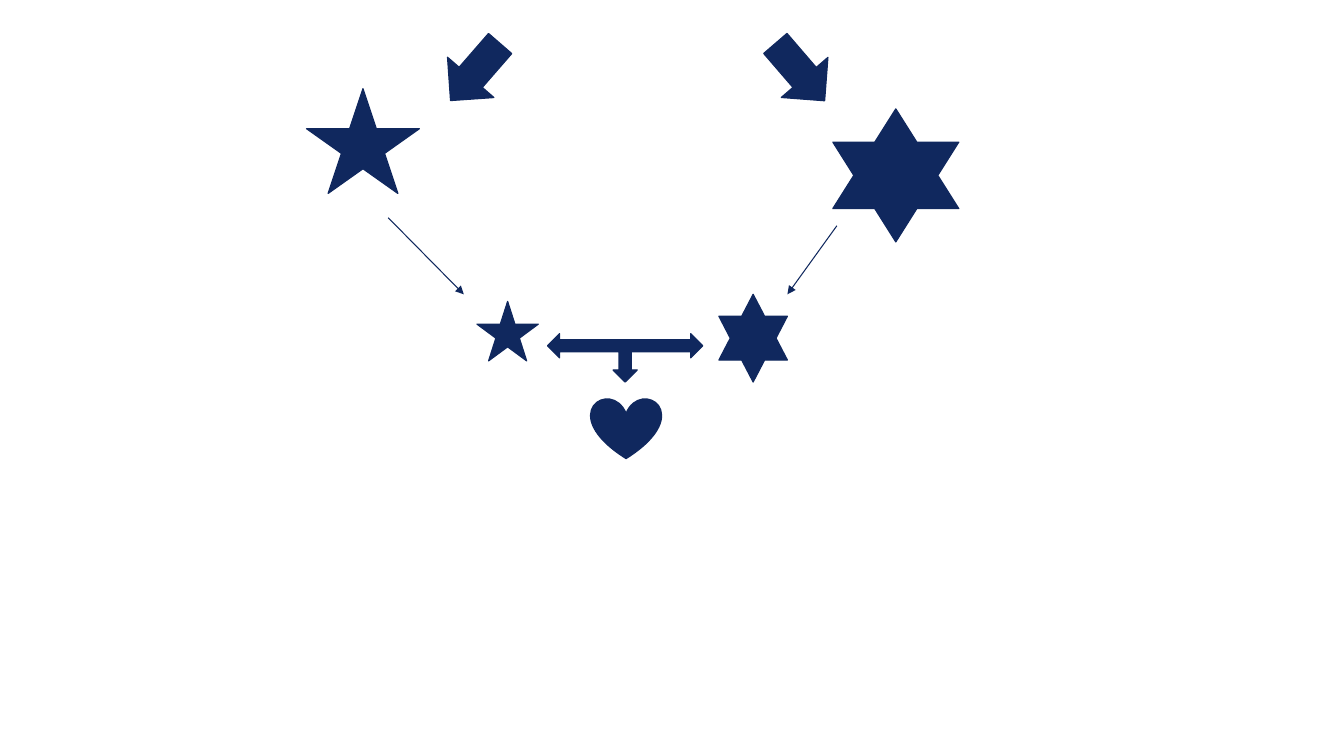
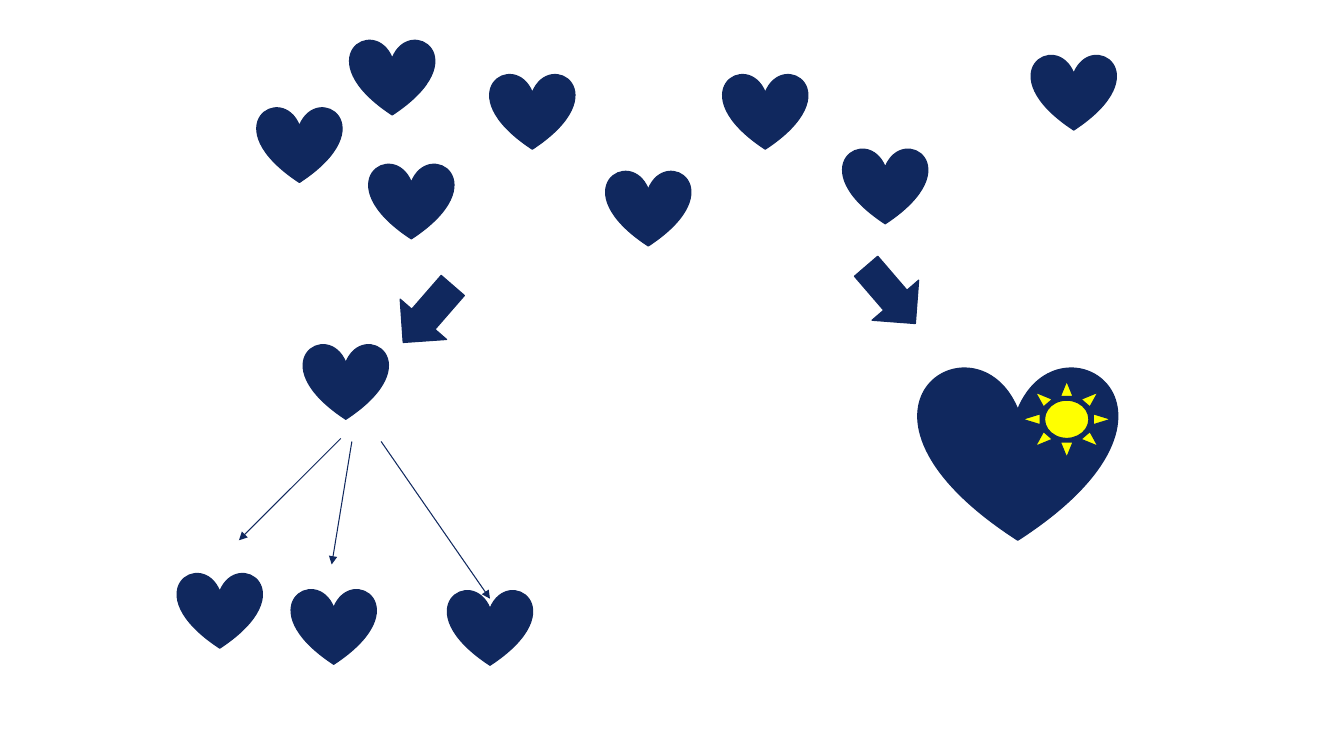
from lxml import etree
from pptx import Presentation
from pptx.dml.color import RGBColor
from pptx.enum.shapes import MSO_CONNECTOR, MSO_SHAPE
from pptx.oxml.ns import qn
from pptx.util import Inches, Pt

STRAIGHT = MSO_CONNECTOR.STRAIGHT
STAR_5 = MSO_SHAPE.STAR_5_POINT
STAR_6 = MSO_SHAPE.STAR_6_POINT
BLOCK_ARROW = MSO_SHAPE.DOWN_ARROW
THREE_WAY_ARROW = MSO_SHAPE.LEFT_RIGHT_UP_ARROW
HEART = MSO_SHAPE.HEART
SUN = MSO_SHAPE.SUN

COLORS = {"navy": "10285E", "yellow": "FFFF00"}
HEART_SIZE = (0.84, 0.75)
BLOCK_ARROW_SIZE = (0.61, 0.75)
TO_LEFT, TO_RIGHT = 41, 319.3


def rgb(name):
    return RGBColor.from_string(COLORS[name])


class Region:
    """A part of a slide whose symbols are placed from its top left corner."""

    def __init__(self, slide, left, top):
        self.shapes = slide.shapes
        self.left, self.top = left, top

    def point(self, x, y):
        return Inches(self.left + x), Inches(self.top + y)

    def symbol(self, kind, position, size, fill="navy", rotation=0):
        width, height = size
        symbol = self.shapes.add_shape(
            kind, *self.point(*position), Inches(width), Inches(height))
        symbol.shadow.inherit = False
        symbol.rotation = rotation
        symbol.fill.solid()
        symbol.fill.fore_color.rgb = rgb(fill)
        symbol.line.color.rgb = rgb("navy")
        symbol.line.width = Pt(0.85)

    def heart(self, position, size=HEART_SIZE):
        self.symbol(HEART, position, size)

    def block_arrow(self, position, rotation):
        self.symbol(BLOCK_ARROW, position, BLOCK_ARROW_SIZE, rotation=rotation)

    def thin_arrow(self, start, end):
        arrow = self.shapes.add_connector(
            STRAIGHT, *self.point(*start), *self.point(*end))
        arrow.line.color.rgb = rgb("navy")
        arrow.line.width = Pt(0.75)
        outline = arrow.line._get_or_add_ln()
        etree.SubElement(outline, qn("a:tailEnd"), type="triangle")
        etree.SubElement(arrow._element.spPr, qn("a:effectLst"))


def draw_star_couple(slide, left, top):
    """Two stars, their smaller offspring, and the heart these lead to."""
    region = Region(slide, left, top)
    for kind, position, size in (
        (STAR_5, (0, 0.54), (1.12, 1.04)),
        (STAR_6, (5.22, 0.74), (1.25, 1.32)),
        (STAR_5, (1.69, 2.65), (0.61, 0.59)),
        (STAR_6, (4.09, 2.58), (0.68, 0.87)),
    ):
        region.symbol(kind, position, size)
    region.block_arrow((1.37, 0), TO_LEFT)
    region.block_arrow((4.59, 0), TO_RIGHT)
    region.thin_arrow((0.81, 1.82), (1.56, 2.58))
    region.thin_arrow((5.26, 1.9), (4.77, 2.58))
    region.symbol(THREE_WAY_ARROW, (2.39, 2.97), (1.54, 0.48), rotation=180)
    region.heart((2.82, 3.61), (0.7, 0.6))


def draw_heart_crowd(slide, left, top):
    region = Region(slide, left, top)
    for position in (
        (0, 0.67), (0.92, 0), (1.11, 1.23), (2.31, 0.34),
        (3.46, 1.3), (4.62, 0.34), (5.81, 1.08), (7.68, 0.15),
    ):
        region.heart(position)


def draw_heart_descendants(slide, left, top):
    region = Region(slide, left, top)
    region.block_arrow((2.18, 0), TO_LEFT)
    region.heart((1.25, 0.67))
    for start, end, child in (
        ((1.62, 1.61), (0.61, 2.62), (0, 2.94)),
        ((1.73, 1.64), (1.53, 2.86), (1.13, 3.1)),
        ((2.02, 1.64), (3.1, 3.2), (2.68, 3.11)),
    ):
        region.thin_arrow(start, end)
        region.heart(child)


def draw_sunny_heart(slide, left, top):
    region = Region(slide, left, top)
    region.block_arrow((0, 0), TO_RIGHT)
    region.heart((0.58, 1.08), (1.97, 1.73))
    region.symbol(SUN, (1.61, 1.23), (0.88, 0.76), fill="yellow")


def main():
    deck = Presentation()
    deck.slide_width, deck.slide_height = Inches(13.33), Inches(7.5)
    blank = deck.slide_layouts[6]

    stars = deck.slides.add_slide(blank)
    draw_star_couple(stars, 3.04, 0.34)

    hearts = deck.slides.add_slide(blank)
    draw_heart_crowd(hearts, 2.55, 0.39)
    draw_heart_descendants(hearts, 1.76, 2.74)
    draw_sunny_heart(hearts, 8.53, 2.55)

    deck.save("out.pptx")


if __name__ == "__main__":
    main()
